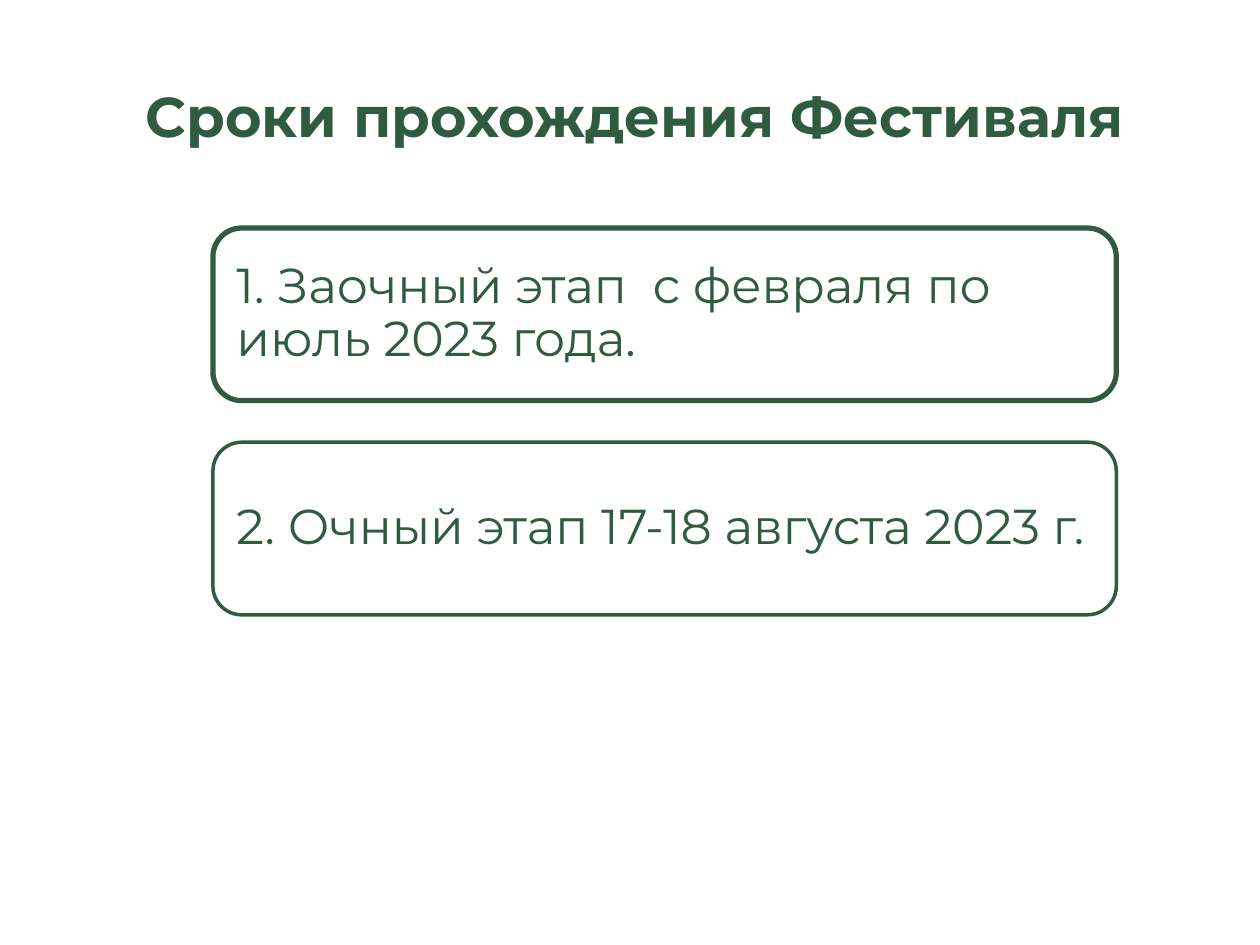
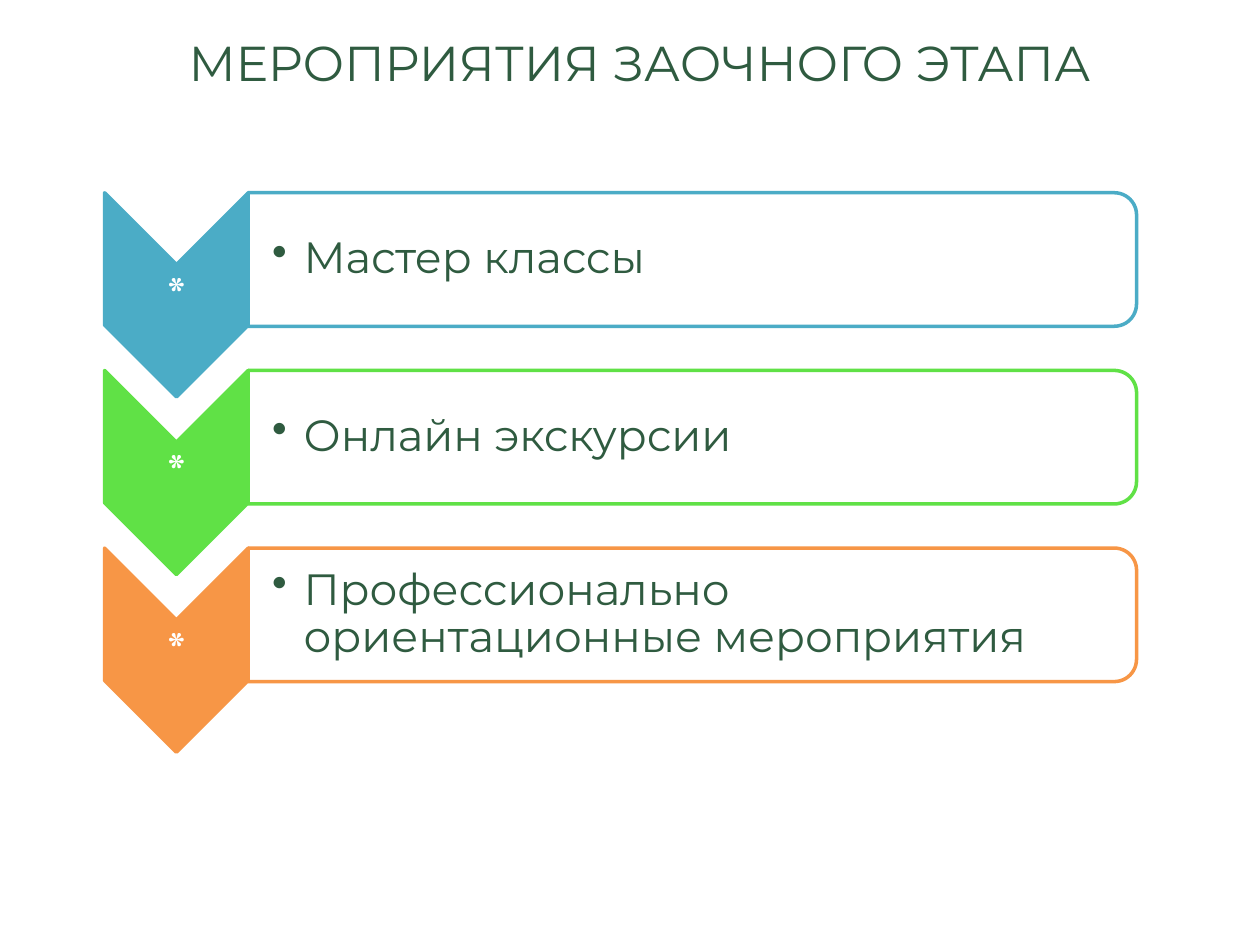
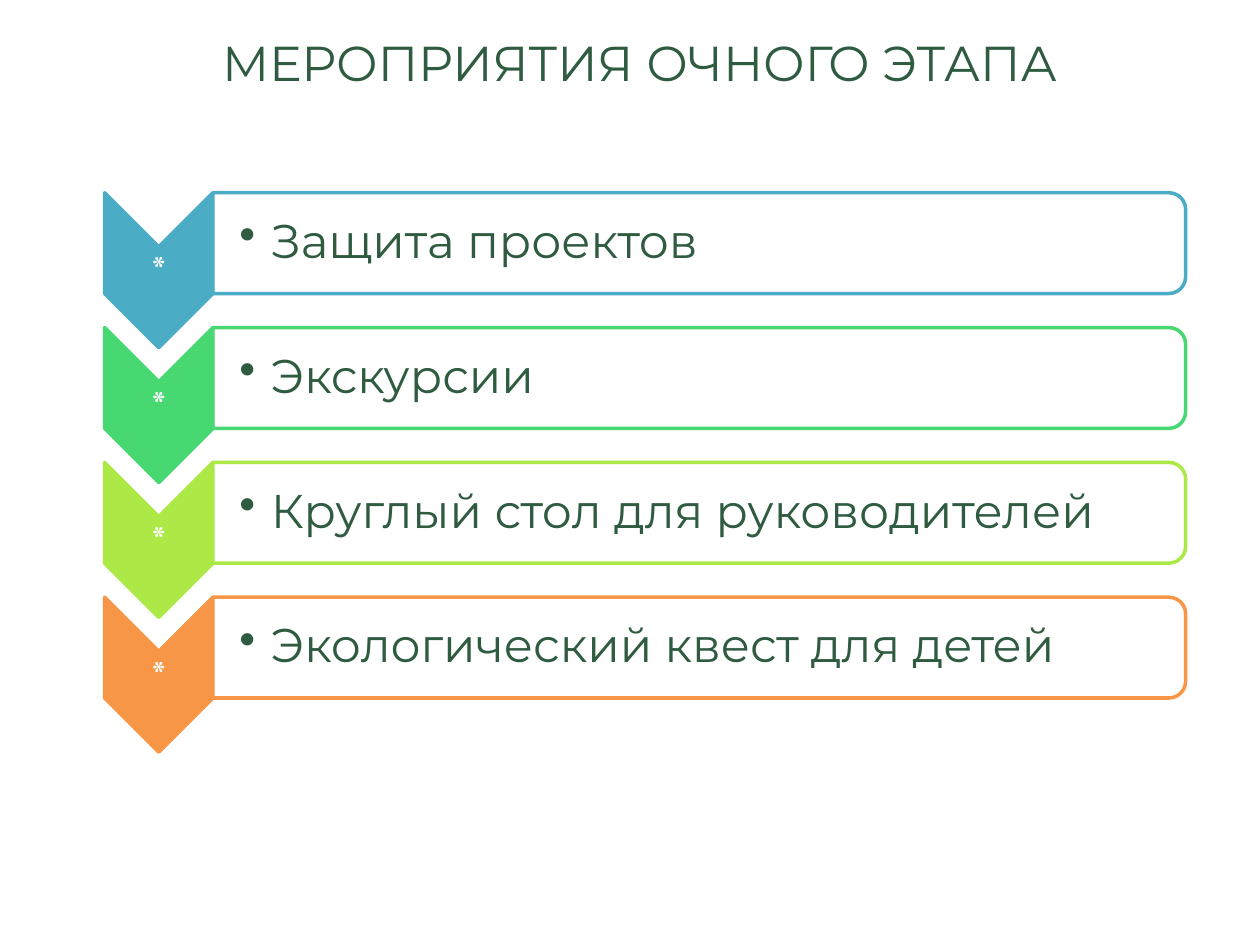
from dataclasses import dataclass

from lxml import etree
from pptx import Presentation
from pptx.dml.color import RGBColor
from pptx.enum.shapes import MSO_SHAPE
from pptx.enum.text import MSO_ANCHOR, MSO_AUTO_SIZE, PP_ALIGN
from pptx.oxml.ns import qn
from pptx.util import Emu, Pt

LEFT, CENTER = PP_ALIGN.LEFT, PP_ALIGN.CENTER
TOP, MIDDLE = MSO_ANCHOR.TOP, MSO_ANCHOR.MIDDLE
FIT = MSO_AUTO_SIZE.SHAPE_TO_FIT_TEXT
ROUND = MSO_SHAPE.ROUNDED_RECTANGLE
ARROW = MSO_SHAPE.CHEVRON
BAR = MSO_SHAPE.ROUND_2_SAME_RECTANGLE

SCALE = 9144  # EMU in one px, 100 px to the inch
INDENT = 25


@dataclass(frozen=True)
class Theme:
    ink: str = "2F5B40"
    white: str = "FFFFFF"
    blue: str = "4BACC6"
    green: str = "60E146"
    mint: str = "47D872"
    lime: str = "ACE946"
    orange: str = "F79646"
    font: str = "Montserrat"
    mark: str = "Cambria"
    head: int = 32
    body: int = 28
    line: int = 2
    bold_line: int = 3


THEME = Theme()


@dataclass(frozen=True)
class Box:
    x: float
    y: float
    w: float
    h: float


@dataclass(frozen=True)
class Stage:
    text: str
    line: int


@dataclass(frozen=True)
class Step:
    text: str
    color: str


@dataclass(frozen=True)
class Flow:
    """Sizes of a column of chevrons, each with a bar to its right."""
    arrow_w: int
    arrow_h: int
    bar_w: int
    bar_h: int
    pitch: int
    pad: int
    inset: int
    size: int
    mark: int


HEAD_BOX = Box(55, 60, 898, 64)
TITLE_BOX = Box(51, 21, 913, 57)
STAGE_BOX = Box(169, 181, 717, 137)
STAGE_PITCH = 170
FLOW_X, FLOW_Y = 83, 153

STAGES = (
    Stage("1. Заочный этап  с февраля по июль 2023 года.", THEME.bold_line),
    Stage("2. Очный этап 17-18 августа 2023 г.", THEME.line),
)
REMOTE = (
    Step("Мастер классы", THEME.blue),
    Step("Онлайн экскурсии", THEME.green),
    Step("Профессионально ориентационные мероприятия", THEME.orange),
)
ONSITE = (
    Step("Защита проектов", THEME.blue),
    Step("Экскурсии", THEME.mint),
    Step("Круглый стол для руководителей", THEME.lime),
    Step("Экологический квест для детей", THEME.orange),
)
REMOTE_FLOW = Flow(114, 162, 705, 106, 141, 5, 19, 25, 29)
ONSITE_FLOW = Flow(86, 123, 772, 80, 107, 4, 21, 27, 22)


def px(n: float) -> Emu:
    return Emu(round(n * SCALE))


def place(box: Box) -> tuple[Emu, Emu, Emu, Emu]:
    return px(box.x), px(box.y), px(box.w), px(box.h)


def write(shape, text: str, *, size: int, color: str = THEME.ink,
          font: str = THEME.font, bold: bool = False, align=LEFT,
          anchor=MIDDLE, inset: tuple[int, int, int, int] = (2, 2, 2, 2),
          space: float = 0.9, bullet: bool = False) -> None:
    """Fill a shape with one paragraph; inset is left, top, right, bottom."""
    frame = shape.text_frame
    frame.word_wrap = True
    frame.vertical_anchor = anchor
    (frame.margin_left, frame.margin_top,
     frame.margin_right, frame.margin_bottom) = map(px, inset)
    para = frame.paragraphs[0]
    para.alignment = align
    para.line_spacing = space
    if bullet:
        props = para._p.get_or_add_pPr()
        props.set("marL", str(px(INDENT)))
        props.set("indent", str(-px(INDENT)))
        etree.SubElement(props, qn("a:buChar"), char="•")
    run = para.add_run()
    run.text = text
    run.font.size = Pt(size)
    run.font.name = font
    run.font.bold = bold
    run.font.color.rgb = RGBColor.from_string(color)


def draw(slide, kind, box: Box, *, fill: str, line: str, width: int,
         alpha: int = 100):
    shape = slide.shapes.add_shape(kind, *place(box))
    shape.shadow.inherit = False
    shape.fill.solid()
    shape.fill.fore_color.rgb = RGBColor.from_string(fill)
    if alpha < 100:
        tint = shape._element.spPr.find(f"{qn('a:solidFill')}/{qn('a:srgbClr')}")
        etree.SubElement(tint, qn("a:alpha"), val=str(alpha * 1000))
    shape.line.color.rgb = RGBColor.from_string(line)
    shape.line.width = Pt(width)
    return shape


def turn(box: Box) -> Box:
    """Give the frame that covers the box once it is rotated by 90 degrees."""
    shift = (box.w - box.h) / 2
    return Box(box.x + shift, box.y - shift, box.h, box.w)


def add_slide(deck, text: str, box: Box, size: int, bold: bool = False):
    slide = deck.slides.add_slide(deck.slide_layouts[5])
    title = slide.shapes.title
    title.left, title.top, title.width, title.height = place(box)
    write(title, text, size=size, bold=bold, align=CENTER, anchor=TOP,
          inset=(10, 5, 10, 5), space=1.0)
    title.text_frame.auto_size = FIT
    return slide


def add_stages(slide, stages: tuple[Stage, ...]) -> None:
    for i, stage in enumerate(stages):
        box = Box(STAGE_BOX.x, STAGE_BOX.y + i * STAGE_PITCH,
                  STAGE_BOX.w, STAGE_BOX.h)
        shape = draw(slide, ROUND, box, fill=THEME.white, line=THEME.ink,
                     width=stage.line)
        write(shape, stage.text, size=THEME.body, inset=(12, 12, 12, 12))


def add_flow(slide, flow: Flow, steps: tuple[Step, ...]) -> None:
    bar_x = FLOW_X + flow.arrow_w
    for i, step in enumerate(steps):
        y = FLOW_Y + i * flow.pitch
        arrow = Box(FLOW_X, y, flow.arrow_w, flow.arrow_h)
        bar = Box(bar_x, y, flow.bar_w, flow.bar_h)
        mark = Box(FLOW_X, y + flow.arrow_w / 2,
                   flow.arrow_w, flow.arrow_h - flow.arrow_w)
        label = Box(bar_x, y + flow.pad,
                    flow.bar_w - flow.pad, flow.bar_h - 2 * flow.pad)

        draw(slide, ARROW, turn(arrow), fill=step.color, line=step.color,
             width=THEME.line).rotation = 90
        write(slide.shapes.add_textbox(*place(mark)), "*", size=flow.mark,
              color=THEME.white, font=THEME.mark, align=CENTER)
        draw(slide, BAR, turn(bar), fill=THEME.white, line=step.color,
             width=THEME.line, alpha=90).rotation = 90
        write(slide.shapes.add_textbox(*place(label)), step.text,
              size=flow.size, inset=(flow.inset, 2, 2, 2), bullet=True)


def main() -> None:
    deck = Presentation()
    deck.slide_width, deck.slide_height = px(1000), px(750)

    dates = add_slide(deck, "Сроки прохождения Фестиваля", HEAD_BOX,
                      THEME.head, bold=True)
    add_stages(dates, STAGES)

    remote = add_slide(deck, "МЕРОПРИЯТИЯ ЗАОЧНОГО ЭТАПА", TITLE_BOX, THEME.body)
    add_flow(remote, REMOTE_FLOW, REMOTE)

    onsite = add_slide(deck, "МЕРОПРИЯТИЯ ОЧНОГО ЭТАПА", TITLE_BOX, THEME.body)
    add_flow(onsite, ONSITE_FLOW, ONSITE)

    deck.save("out.pptx")


if __name__ == "__main__":
    main()
